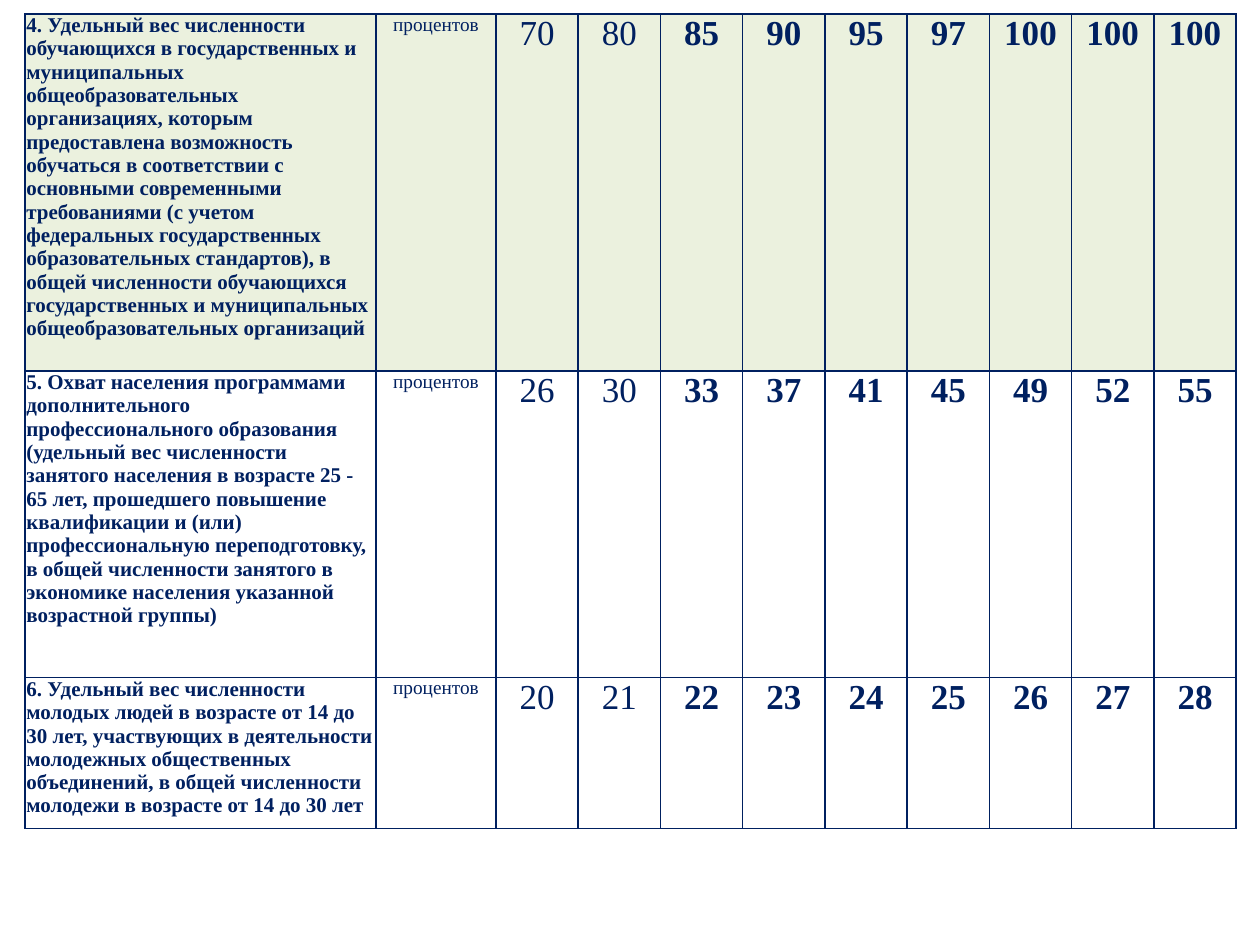
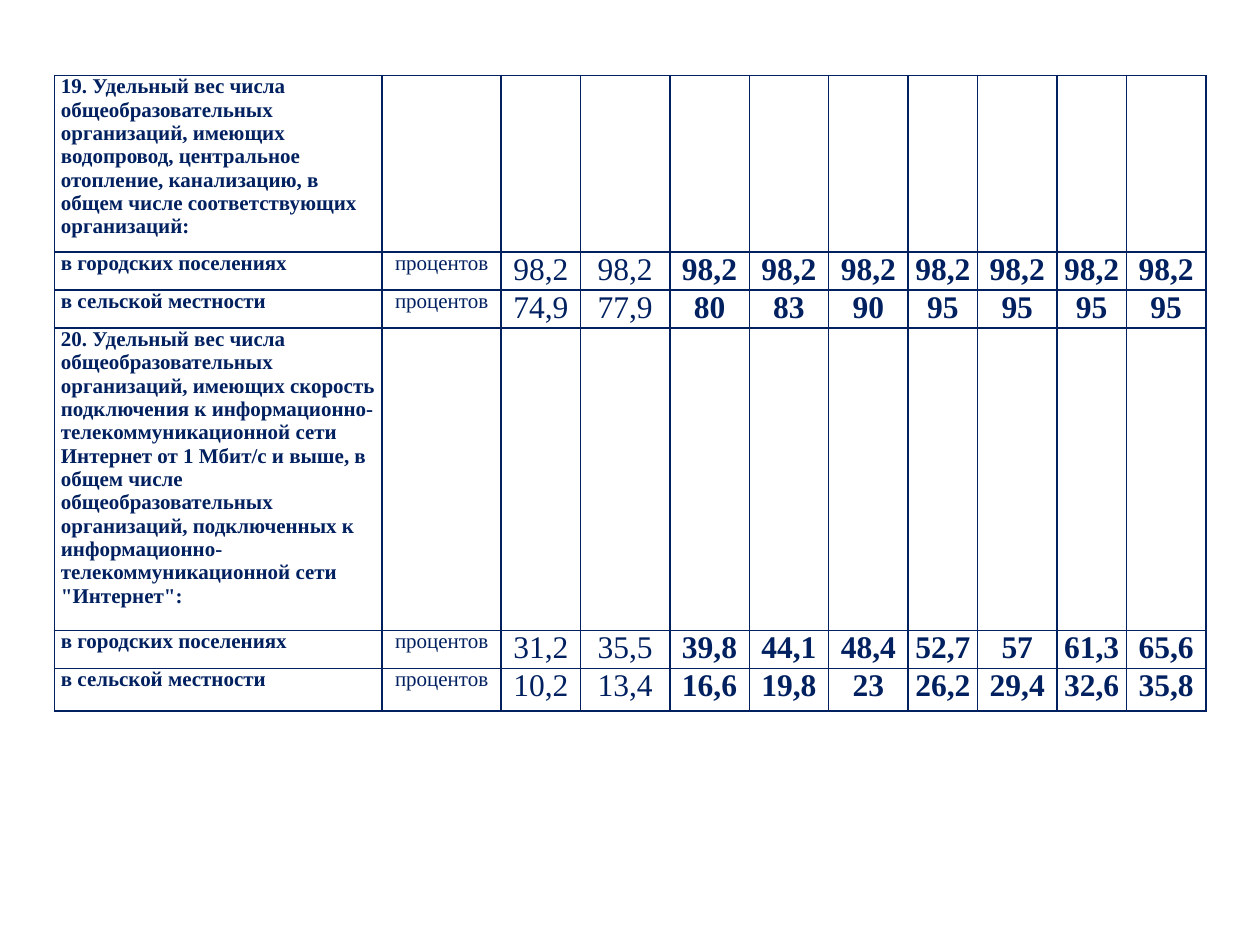
"""Build two slides with tables of education indicators by year."""
import pptx
import pptx.dml.color
import pptx.enum.text
import pptx.oxml
import pptx.oxml.ns
import pptx.util

Pt = pptx.util.Pt
COLORS = {"ink": "002060", "band": "EBF1DE"}
FONT = "Times New Roman"
UNIT = "процентов"
CITY, VILLAGE = "в городских поселениях", "в сельской местности"

indicator_pages = [
    {
        "left": 14.4, "top": 7.9, "inset": 0.7, "unit_size": 11, "value_size": 20, "banded_rows": {0},
        "widths": [200.5, 68.5] + [47] * 9,
        "rows": [
            (204, "4. Удельный вес численности обучающихся в государственных и муниципальных "
                  "общеобразовательных организациях, которым предоставлена возможность обучаться "
                  "в соответствии с основными современными требованиями (с учетом федеральных "
                  "государственных образовательных стандартов), в общей численности обучающихся "
                  "государственных и муниципальных общеобразовательных организаций",
             "70 80 85 90 95 97 100 100 100"),
            (175.4, "5. Охват населения программами дополнительного профессионального образования "
                    "(удельный вес численности занятого населения в возрасте 25 - 65 лет, прошедшего "
                    "повышение квалификации и (или) профессиональную переподготовку, в общей "
                    "численности занятого в экономике населения указанной возрастной группы)",
             "26 30 33 37 41 45 49 52 55"),
            (86.3, "6. Удельный вес численности молодых людей в возрасте от 14 до 30 лет, участвующих "
                   "в деятельности молодежных общественных объединений, в общей численности молодежи "
                   "в возрасте от 14 до 30 лет",
             "20 21 22 23 24 25 26 27 28"),
        ],
    },
    {
        "left": 31, "top": 43, "inset": 3.8, "unit_size": 12, "value_size": 18, "banded_rows": set(),
        "widths": [187.4, 68, 45.4, 51, 45.4, 45.4, 45.4, 39.7, 45.4, 39.7, 45.4],
        "rows": [
            (101, "19. Удельный вес числа общеобразовательных организаций, имеющих водопровод, "
                  "центральное отопление, канализацию, в общем числе соответствующих организаций:", ""),
            (21.7, CITY, "98,2 98,2 98,2 98,2 98,2 98,2 98,2 98,2 98,2"),
            (21.7, VILLAGE, "74,9 77,9 80 83 90 95 95 95 95"),
            (172.8, "20. Удельный вес числа общеобразовательных организаций, имеющих скорость "
                    "подключения к информационно-телекоммуникационной сети Интернет от 1 Мбит/с и выше, "
                    "в общем числе общеобразовательных организаций, подключенных к "
                    "информационно-телекоммуникационной сети \"Интернет\":", ""),
            (21.7, CITY, "31,2 35,5 39,8 44,1 48,4 52,7 57 61,3 65,6"),
            (24.5, VILLAGE, "10,2 13,4 16,6 19,8 23 26,2 29,4 32,6 35,8"),
        ],
    },
]


def add_borders(cell):
    properties = cell._tc.get_or_add_tcPr()
    for side in ("lnL", "lnR", "lnT", "lnB"):
        properties.append(pptx.oxml.parse_xml(
            f'<a:{side} {pptx.oxml.ns.nsdecls("a")} w="12700"><a:solidFill>'
            f'<a:srgbClr val="{COLORS["ink"]}"/></a:solidFill></a:{side}>'))


def write_cell(cell, text, size, bold, align):
    paragraph = cell.text_frame.paragraphs[0]
    paragraph.alignment = align
    run = paragraph.add_run()
    run.text = text
    for name, value in {"name": FONT, "size": Pt(size), "bold": bold}.items():
        setattr(run.font, name, value)
    run.font.color.rgb = pptx.dml.color.RGBColor.from_string(COLORS["ink"])


presentation = pptx.Presentation()
presentation.slide_width, presentation.slide_height = Pt(720), Pt(540)
LEFT, CENTER = pptx.enum.text.PP_ALIGN.LEFT, pptx.enum.text.PP_ALIGN.CENTER

for page in indicator_pages:
    slide = presentation.slides.add_slide(presentation.slide_layouts[6])
    widths, rows = page["widths"], page["rows"]
    indicators = slide.shapes.add_table(
        len(rows), len(widths), Pt(page["left"]), Pt(page["top"]),
        Pt(sum(widths)), Pt(sum(row[0] for row in rows))).table
    indicators.first_row = indicators.horz_banding = False
    for column, width in zip(indicators.columns, widths):
        column.width = Pt(width)

    margins = {"margin_left": Pt(page["inset"]), "margin_right": Pt(page["inset"]),
               "margin_top": 0, "margin_bottom": 0}
    for row_index, (height, label, values) in enumerate(rows):
        indicators.rows[row_index].height = Pt(height)
        texts = [label] + ([UNIT] + values.split() if values else [])
        for column_index in range(len(widths)):
            cell = indicators.cell(row_index, column_index)
            for name, value in margins.items():
                setattr(cell, name, value)
            add_borders(cell)
            if row_index in page["banded_rows"]:
                cell.fill.solid()
                cell.fill.fore_color.rgb = pptx.dml.color.RGBColor.from_string(COLORS["band"])
            else:
                cell.fill.background()
            if column_index < len(texts):
                size = {0: 12, 1: page["unit_size"]}.get(column_index, page["value_size"])
                bold = column_index not in (1, 2, 3)
                write_cell(cell, texts[column_index], size, bold, CENTER if column_index else LEFT)

presentation.save("out.pptx")
